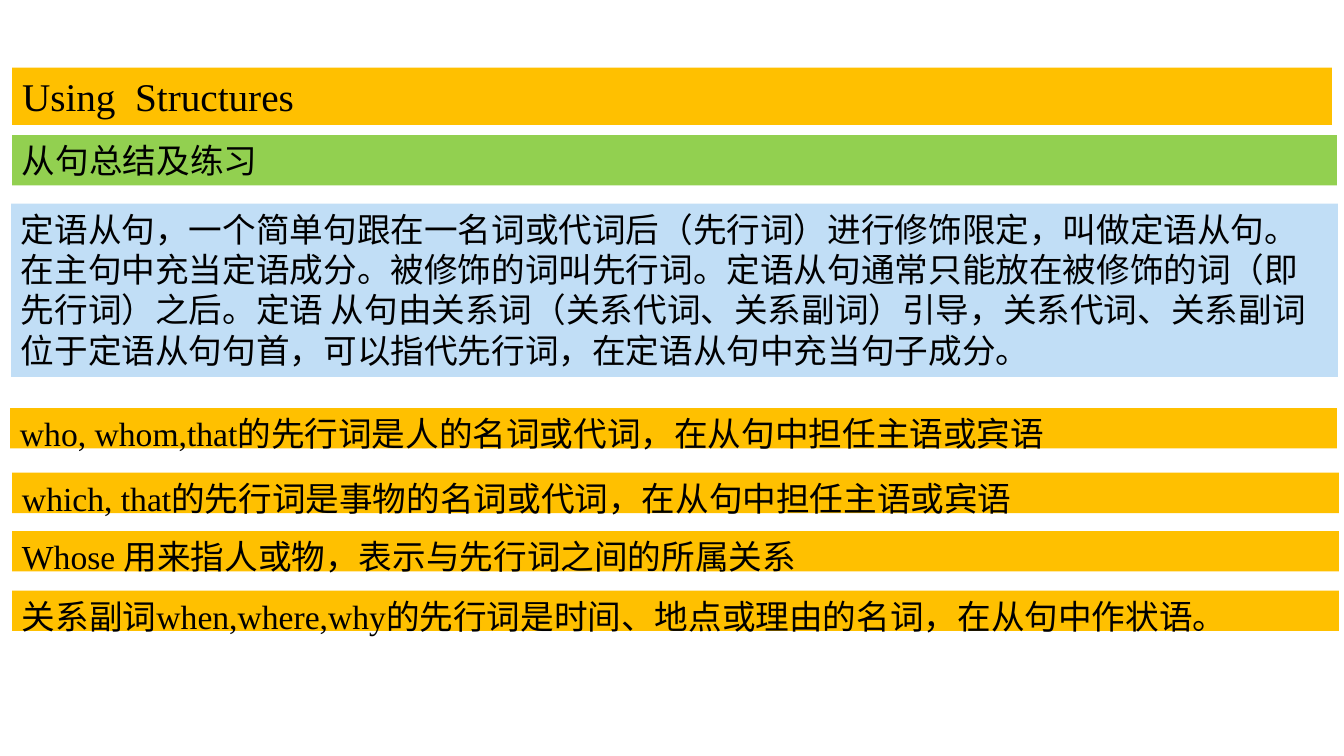
from dataclasses import dataclass

import pptx
import pptx.dml.color
import pptx.enum.text
import pptx.util

Inches = pptx.util.Inches
Color = pptx.dml.color.RGBColor
AutoSize = pptx.enum.text.MSO_AUTO_SIZE


@dataclass(frozen=True)
class Theme:
    ink: str = "000000"
    gold: str = "FFC000"
    green: str = "92D050"
    sky: str = "C1DEF6"
    title_size: int = 28
    body_size: int = 24
    serif: str = "Times New Roman"
    sans: str = "Arial"


THEME = Theme()

SUMMARY = (
    "定语从句，一个简单句跟在一名词或代词后（先行词）进行修饰限定，叫做定语从句。"
    "在主句中充当定语成分。被修饰的词叫先行词。"
    "定语从句通常只能放在被修饰的词（即先行词）之后。"
    "定语 从句由关系词（关系代词、关系副词）引导，"
    "关系代词、关系副词位于定语从句句首，可以指代先行词，在定语从句中充当句子成分。"
)

RULES = [
    (0.1, 4.05, "who, whom,that的先行词是人的名词或代词，在从句中担任主语或宾语"),
    (0.12, 4.69, "which, that的先行词是事物的名词或代词，在从句中担任主语或宾语"),
    (0.12, 5.27, "Whose 用来指人或物，表示与先行词之间的所属关系"),
    (0.12, 5.86, "关系副词when,where,why的先行词是时间、地点或理由的名词，在从句中作状语。"),
]


def apply_format(target, values):
    for name, value in values.items():
        setattr(target, name, value)


def add_band(page, bounds, text, fill, size=THEME.body_size,
             font=THEME.serif, auto_size=AutoSize.SHAPE_TO_FIT_TEXT):
    box = page.shapes.add_textbox(*map(Inches, bounds))
    box.fill.solid()
    box.fill.fore_color.rgb = Color.from_string(fill)
    apply_format(box.text_frame, {
        "word_wrap": True,
        "auto_size": auto_size,
        "vertical_anchor": pptx.enum.text.MSO_ANCHOR.TOP,
    })
    span = box.text_frame.paragraphs[0].add_run()
    span.text = text
    apply_format(span.font, {"name": font, "size": pptx.util.Pt(size)})
    span.font.color.rgb = Color.from_string(THEME.ink)


def add_headings(page, left, top):
    add_band(page, (left, top, 13.09, 0.57), "Using  Structures",
             THEME.gold, size=THEME.title_size)
    add_band(page, (left, top + 0.67, 13.14, 0.5), "从句总结及练习",
             THEME.green, font=THEME.sans)


def add_summary(page, bounds):
    add_band(page, bounds, SUMMARY, THEME.sky)


def add_rules(page, width, height):
    for left, top, text in RULES:
        add_band(page, (left, top, width, height), text, THEME.gold,
                 auto_size=AutoSize.NONE)


def main():
    deck = pptx.Presentation()
    apply_format(deck, {"slide_width": Inches(13.33), "slide_height": Inches(7.5)})
    page = deck.slides.add_slide(deck.slide_layouts[6])
    add_headings(page, 0.12, 0.67)
    add_summary(page, (0.11, 2.02, 13.16, 1.72))
    add_rules(page, 13.16, 0.4)
    deck.save("out.pptx")


if __name__ == "__main__":
    main()
